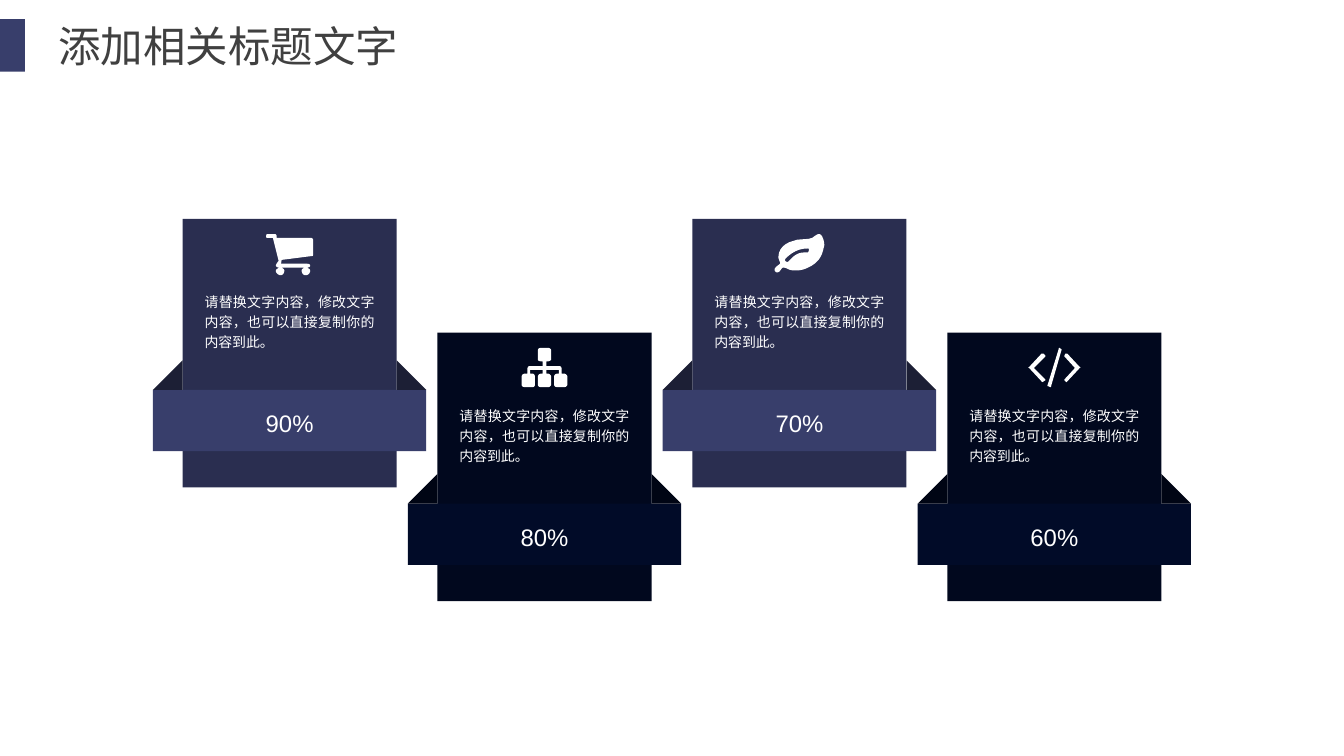
from pptx import Presentation
from pptx.dml.color import RGBColor
from pptx.enum import shapes, text
from pptx.util import Emu, Inches, Pt

TITLE = "添加相关标题文字"
BODY = "请替换文字内容，修改文字内容，也可以直接复制你的内容到此。"

# Icon outlines in hundredths of an inch: pairs are corners, sextuples are Bézier curves.
CART = [
    [(49, 22), (49, 23, 48, 23, 47, 23), (16, 27), (16, 28, 16, 30, 15, 31), (43, 31),
     (45, 31, 46, 32, 46, 33), (46, 34, 45, 35, 43, 35), (13, 35), (12, 35, 10, 34, 10, 33),
     (10, 32, 12, 29, 13, 28), (7, 4), (1, 4), (0, 4, 0, 3, 0, 2), (0, 2, 0, 0, 1, 0), (9, 0),
     (11, 0, 11, 2, 11, 4), (47, 4), (48, 4, 49, 5, 49, 6)],
    [(15, 43), (13, 43, 10, 41, 10, 38), (10, 37, 13, 35, 15, 35),
     (17, 35, 19, 37, 19, 38), (19, 41, 17, 43, 15, 43)],
    [(41, 43), (39, 43, 37, 41, 37, 38), (37, 37, 39, 35, 41, 35),
     (44, 35, 46, 37, 46, 38), (46, 41, 44, 43, 41, 43)],
]
CHART = [
    [(48, 38), (48, 40, 46, 41, 45, 41), (37, 41), (35, 41, 34, 40, 34, 38), (34, 30),
     (34, 29, 35, 27, 37, 27), (39, 27), (39, 23), (26, 23), (26, 27), (28, 27),
     (29, 27, 31, 29, 31, 30), (31, 38), (31, 40, 29, 41, 28, 41), (20, 41),
     (18, 41, 17, 40, 17, 38), (17, 30), (17, 29, 18, 27, 20, 27), (22, 27), (22, 23),
     (9, 23), (9, 27), (12, 27), (13, 27, 14, 29, 14, 30), (14, 38),
     (14, 40, 13, 41, 12, 41), (3, 41), (1, 41, 0, 40, 0, 38), (0, 30),
     (0, 29, 1, 27, 3, 27), (6, 27), (6, 23), (6, 20, 7, 19, 9, 19), (22, 19), (22, 14),
     (20, 14), (18, 14, 17, 13, 17, 12), (17, 3), (17, 1, 18, 0, 20, 0), (28, 0),
     (29, 0, 31, 1, 31, 3), (31, 12), (31, 13, 29, 14, 28, 14), (26, 14), (26, 19),
     (39, 19), (41, 19, 42, 20, 42, 23), (42, 27), (45, 27), (46, 27, 48, 29, 48, 30)],
]
LEAF = [
    [(51, 16), (49, 25, 44, 31, 35, 35), (31, 37, 27, 38, 23, 38), (20, 38, 17, 38, 15, 37),
     (13, 36, 11, 35, 9, 35), (7, 35, 6, 40, 3, 40), (2, 40, 1, 40, 0, 38), (0, 37),
     (0, 34, 6, 32, 6, 30), (5, 28), (5, 27, 4, 26, 4, 24), (4, 15, 11, 9, 20, 7),
     (26, 4, 38, 7, 42, 2), (44, 1, 44, 0, 47, 0), (50, 0, 52, 8, 52, 11),
     (52, 13, 51, 15, 51, 16)],
    [(35, 15), (25, 15, 18, 19, 11, 26), (11, 28), (11, 28, 12, 29, 13, 29), (14, 29),
     (15, 28, 17, 26, 18, 25), (23, 20, 27, 19, 35, 19), (35, 19, 36, 18, 36, 16),
     (36, 15, 35, 15, 35, 15)],
]
CODE = [
    [(16, 35), (16, 36, 15, 36, 14, 35), (1, 21), (0, 21, 0, 20, 1, 20), (14, 6),
     (15, 6, 16, 6, 16, 6), (18, 8), (18, 9), (6, 21), (18, 33), (18, 34)],
    [(24, 40), (24, 41, 24, 41, 23, 41), (21, 40), (20, 40), (32, 1),
     (32, 0, 32, 0, 33, 0), (34, 1), (35, 1, 35, 2, 35, 2)],
    [(41, 35), (40, 36, 40, 36, 39, 35), (38, 34), (38, 33), (49, 21), (38, 9), (38, 8),
     (39, 6), (40, 6, 40, 6, 41, 6), (54, 20), (55, 20, 55, 21, 54, 21)],
]
CARDS = [("90%", CART), ("80%", CHART), ("70%", LEAF), ("60%", CODE)]
TONES = [{"card": "2A2E50", "band": "383E6B", "fold": "1C1F35"},
         {"card": "01081E", "band": "010B28", "fold": "000514"}]

WIDTH, HEIGHT = 14.06, 7.91
LEFT, TOP, PITCH, DROP = 1.91, 2.29, 8 / 3, 1.19
CARD_W, CARD_H, BAND_H, FOLD = 2.24, 2.81, 0.64, 0.31
BAND_Y, BODY_Y, ICON_Y, INSET = 1.79, 0.75, 0.16, 0.23


def box(*lengths):
    """Turn inches into slide lengths."""
    return [Inches(length) for length in lengths]


def paint(shape, colour):
    """Fill a shape with one flat colour, with no line or shadow."""
    shape.shadow.inherit = False
    shape.fill.solid()
    shape.fill.fore_color.rgb = RGBColor.from_string(colour)
    shape.line.fill.background()


def block(parent, kind, place, colour):
    """Add a flat preset shape."""
    shape = parent.add_shape(kind, *box(*place))
    paint(shape, colour)
    return shape


def write(paragraph, words, size, colour="FFFFFF"):
    """Add one run of text."""
    run = paragraph.add_run()
    run.text = words
    run.font.name = "Arial"
    run.font.size = Pt(size)
    run.font.color.rgb = RGBColor.from_string(colour)


def caption(parent, place):
    """Add a wrapping text box without margins and return its paragraph."""
    frame = parent.add_textbox(*box(*place)).text_frame
    frame.word_wrap = True
    frame.auto_size = text.MSO_AUTO_SIZE.SHAPE_TO_FIT_TEXT
    frame.margin_left = frame.margin_right = frame.margin_top = frame.margin_bottom = 0
    return frame.paragraphs[0]


def trace(contour, steps=6):
    """Flatten corners and curves into points."""
    points = [contour[0]]
    for node in contour[1:]:
        if len(node) == 2:
            points.append(node)
            continue
        start, first, second, end = points[-1], node[:2], node[2:4], node[4:]
        for step in range(1, steps + 1):
            t = step / steps
            weights = ((1 - t) ** 3, 3 * t * (1 - t) ** 2, 3 * t * t * (1 - t), t ** 3)
            points.append(tuple(sum(w * p for w, p in zip(weights, axis))
                                for axis in zip(start, first, second, end)))
    return points


def draw_icon(parent, contours, centre, top):
    """Draw a white icon centred on a card."""
    outlines = [trace(contour) for contour in contours]
    half = max(x for outline in outlines for x, _ in outline) / 200
    builder = None
    for outline in outlines:
        points = [box(centre - half + x / 100, top + y / 100) for x, y in outline]
        if builder is None:
            builder = parent.build_freeform(*points[0], scale=1.0)
        else:
            builder.move_to(*points[0])
        builder.add_line_segments(points[1:], close=True)
    paint(builder.convert_to_shape(Emu(0), Emu(0)), "FFFFFF")


def draw_ribbon(parent, share, x, y, tone):
    """Draw the folded band that carries a percentage."""
    ribbon = parent.add_group_shape().shapes
    band = block(ribbon, shapes.MSO_SHAPE.RECTANGLE,
                 (x - FOLD, y, CARD_W + 2 * FOLD, BAND_H), tone["band"])
    band.text_frame.vertical_anchor = text.MSO_ANCHOR.MIDDLE
    paragraph = band.text_frame.paragraphs[0]
    paragraph.alignment = text.PP_ALIGN.CENTER
    paragraph.line_spacing = 1.2
    write(paragraph, share, 18)
    for fold_x, flip in ((x - FOLD, "1"), (x + CARD_W, "0")):
        fold = block(ribbon, shapes.MSO_SHAPE.RIGHT_TRIANGLE,
                     (fold_x, y - FOLD, FOLD, FOLD), tone["fold"])
        fold._element.spPr.get_or_add_xfrm().set("flipH", flip)


def main():
    """Build the slide."""
    deck = Presentation()
    deck.slide_width, deck.slide_height = box(WIDTH, HEIGHT)
    canvas = deck.slides.add_slide(deck.slide_layouts[6]).shapes
    for column, (share, icon) in enumerate(CARDS):
        tone = TONES[column % 2]
        x, y = LEFT + column * PITCH, TOP + column % 2 * DROP
        block(canvas, shapes.MSO_SHAPE.RECTANGLE, (x, y, CARD_W, CARD_H), tone["card"])
        body = caption(canvas, (x + INSET, y + BODY_Y, CARD_W - 2 * INSET, 0.65))
        body.alignment = text.PP_ALIGN.JUSTIFY
        body.line_spacing = 1.2
        write(body, BODY, 10.5)
        draw_ribbon(canvas, share, x, y + BAND_Y, tone)
        draw_icon(canvas, icon, x + CARD_W / 2, y + ICON_Y)
    title = caption(canvas, (0.61, 0.21, 4.33, 0.54))
    title.space_before = title.space_after = Pt(6)
    write(title, TITLE, 32, "404040")
    block(canvas, shapes.MSO_SHAPE.RECTANGLE, (0, 0.2, 0.26, 0.55), TONES[0]["band"])
    deck.save("out.pptx")


if __name__ == "__main__":
    main()
